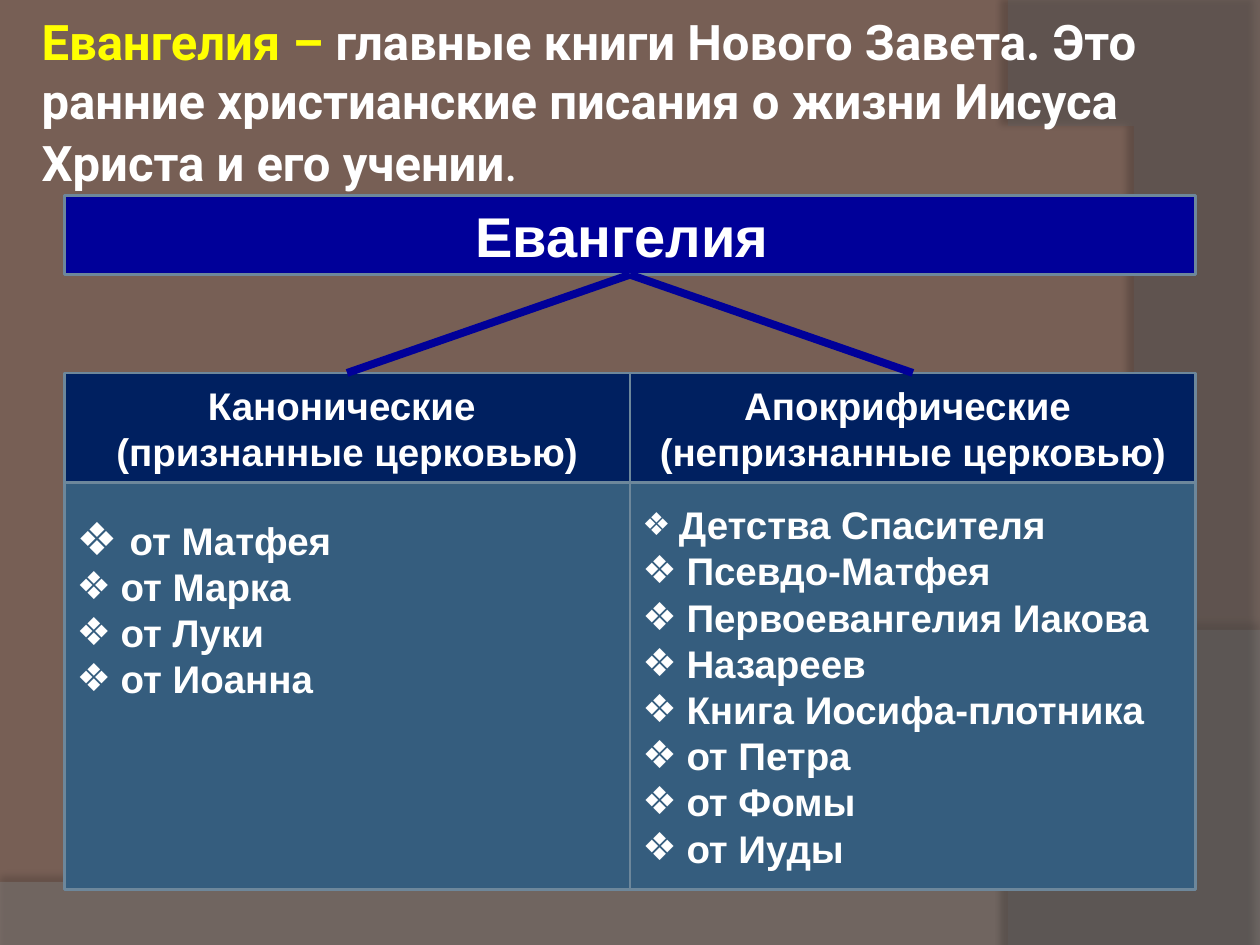
"""Build a slide on canonical and apocryphal gospels."""
from dataclasses import dataclass, field

from lxml import etree
from pptx import Presentation
from pptx import util as u
from pptx.dml.color import RGBColor
from pptx.enum import shapes, text
from pptx.oxml.ns import qn

COLORS = {
    "background": "775F55", "low_wave": "7F7F7F", "side_wave": "5E5E5E",
    "shadow": "000000", "accent": "FFFF00", "text": "FFFFFF",
    "heading": "000099", "header": "002060", "list": "355D7E", "border": "6D879B",
}
WIDTH, HEIGHT = 10, 7.5
MARGIN = 0.51
COLUMN = (WIDTH - 2 * MARGIN) / 2
ROWS = {"heading": (1.55, 0.63), "header": (2.96, 0.87), "list": (3.83, 3.23)}
CURVE_STEPS = 40


@dataclass
class Item:
    label: str
    indent: float = 0.35
    bullet_percent: int = 100


@dataclass
class Box:
    row: str
    column: int
    lines: list
    span: int = 1
    size: int = 22


@dataclass
class Wave:
    color: str
    opacity: int
    start: tuple
    lines: list
    curve: tuple
    shadow: dict = field(default_factory=dict)


WAVES = [
    Wave("low_wave", 45, (0, 7.05), [(0, 7.5), (10, 7.5), (10, 5.2)],
         ((5.59, 7.29), (3.91, 7.19), (0, 7.05)),
         {"opacity": 35, "blur": 4, "distance": 3.5, "angle": 270}),
    Wave("side_wave", 40, (10, 0), [(10, 7.5), (8.21, 7.5)],
         ((9.35, 6.19), (10.18, 3), (8, 0)),
         {"opacity": 45, "blur": 4, "distance": 4, "angle": 180}),
]
HEADING = Box("heading", 0, ["Евангелия "], span=2, size=32)
HEADERS = [
    Box("header", 0, ["Канонические ", "(признанные церковью)"]),
    Box("header", 1, ["Апокрифические ", "(непризнанные церковью)"]),
]
CANONICAL = Box("list", 0, [
    Item("от Матфея", 0.42, 118), Item("от Марка"), Item("от Луки"), Item("от Иоанна"),
])
APOCRYPHAL = Box("list", 1, [
    Item("Детства Спасителя", 0.29, 82), Item("Псевдо-Матфея"),
    Item("Первоевангелия Иакова"), Item("Назареев"), Item("Книга Иосифа-плотника"),
    Item("от Петра"), Item("от Фомы"), Item("от Иуды"),
])


def rgb(name: str) -> RGBColor:
    return RGBColor.from_string(COLORS[name])


def add_alpha(color_element, percent: int) -> None:
    etree.SubElement(color_element, qn("a:alpha"), val=str(percent * 1000))


def bezier(start: tuple, first: tuple, second: tuple, end: tuple) -> list:
    points = []
    for step in range(1, CURVE_STEPS + 1):
        t = step / CURVE_STEPS
        weights = ((1 - t) ** 3, 3 * t * (1 - t) ** 2, 3 * t ** 2 * (1 - t), t ** 3)
        points.append(tuple(
            sum(weight * point[axis] for weight, point in zip(weights, (start, first, second, end)))
            for axis in (0, 1)))
    return points


def draw_wave(slide, wave: Wave) -> None:
    builder = slide.shapes.build_freeform(*wave.start, scale=u.Inches(1))
    builder.add_line_segments(wave.lines + bezier(wave.lines[-1], *wave.curve), close=True)
    shape = builder.convert_to_shape()
    shape.shadow.inherit = False
    shape.line.fill.background()
    shape.fill.solid()
    shape.fill.fore_color.rgb = rgb(wave.color)
    properties = shape._element.spPr
    add_alpha(properties.find(f"{qn('a:solidFill')}/{qn('a:srgbClr')}"), wave.opacity)
    shadow = etree.SubElement(
        properties.find(qn("a:effectLst")), qn("a:outerShdw"),
        blurRad=str(u.Pt(wave.shadow["blur"])), dist=str(u.Pt(wave.shadow["distance"])),
        dir=str(wave.shadow["angle"] * 60000), rotWithShape="0")
    color = etree.SubElement(shadow, qn("a:srgbClr"), val=COLORS["shadow"])
    add_alpha(color, wave.shadow["opacity"])


def set_font(font, size: int, name: str = "Arial", color: str = "text", bold: bool = True) -> None:
    font.size, font.name, font.bold = u.Pt(size), name, bold
    font.color.rgb = rgb(color)


def set_bullet(paragraph, item: Item) -> None:
    properties = paragraph._p.get_or_add_pPr()
    indent = u.Inches(item.indent)
    properties.set("marL", str(indent))
    properties.set("indent", str(-indent))
    etree.SubElement(properties, qn("a:buSzPct"), val=str(item.bullet_percent * 1000))
    etree.SubElement(properties, qn("a:buFont"), typeface="Arial")
    etree.SubElement(properties, qn("a:buChar"), char="❖")


def draw_box(slide, box: Box):
    top, height = ROWS[box.row]
    shape = slide.shapes.add_shape(
        shapes.MSO_SHAPE.RECTANGLE, u.Inches(MARGIN + box.column * COLUMN), u.Inches(top),
        u.Inches(box.span * COLUMN), u.Inches(height))
    shape.shadow.inherit = False
    shape.fill.solid()
    shape.fill.fore_color.rgb = rgb(box.row)
    shape.line.color.rgb = rgb("border")
    shape.line.width = u.Pt(1.5)
    frame = shape.text_frame
    frame.vertical_anchor = text.MSO_ANCHOR.MIDDLE
    for index, line in enumerate(box.lines):
        paragraph = frame.add_paragraph() if index else frame.paragraphs[0]
        if isinstance(line, Item):
            paragraph.text = line.label
            paragraph.alignment = text.PP_ALIGN.LEFT
            set_bullet(paragraph, line)
        else:
            paragraph.text = line
            paragraph.alignment = text.PP_ALIGN.CENTER
        set_font(paragraph.font, box.size)
    return shape


def draw_title(slide) -> None:
    title = slide.shapes.add_textbox(u.Inches(0.28), 0, u.Inches(9.45), u.Inches(1.62))
    frame = title.text_frame
    frame.word_wrap = True
    frame.vertical_anchor = text.MSO_ANCHOR.MIDDLE
    frame.margin_left = frame.margin_right = u.Inches(0.05)
    frame.margin_top = frame.margin_bottom = u.Inches(0.05)
    for words, size, color, bold in (
        ("Евангелия – ", 28, "accent", True),
        ("главные книги Нового Завета. Это ранние христианские писания "
         "о жизни Иисуса Христа и его учении", 28, "text", True),
        (".", 30, "text", False),
    ):
        run = frame.paragraphs[0].add_run()
        run.text = words
        set_font(run.font, size, "Roboto", color, bold)


def join(slide, parent, child) -> None:
    connector = slide.shapes.add_connector(shapes.MSO_CONNECTOR.STRAIGHT, 0, 0, 0, 0)
    connector.begin_connect(parent, 2)
    connector.end_connect(child, 0)
    connector.line.color.rgb = rgb("heading")
    connector.line.width = u.Pt(4.5)
    etree.SubElement(connector._element.spPr, qn("a:effectLst"))


def main() -> None:
    presentation = Presentation()
    presentation.slide_width, presentation.slide_height = u.Inches(WIDTH), u.Inches(HEIGHT)
    slide = presentation.slides.add_slide(presentation.slide_layouts[6])
    slide.background.fill.solid()
    slide.background.fill.fore_color.rgb = rgb("background")
    for wave in WAVES:
        draw_wave(slide, wave)
    draw_title(slide)
    heading = draw_box(slide, HEADING)
    headers = [draw_box(slide, box) for box in HEADERS]
    canonical = draw_box(slide, CANONICAL)
    canonical.text_frame.vertical_anchor = text.MSO_ANCHOR.TOP
    canonical.text_frame.margin_top = u.Inches(0.27)
    draw_box(slide, APOCRYPHAL)
    for header in headers:
        join(slide, heading, header)
    presentation.save("out.pptx")


if __name__ == "__main__":
    main()
